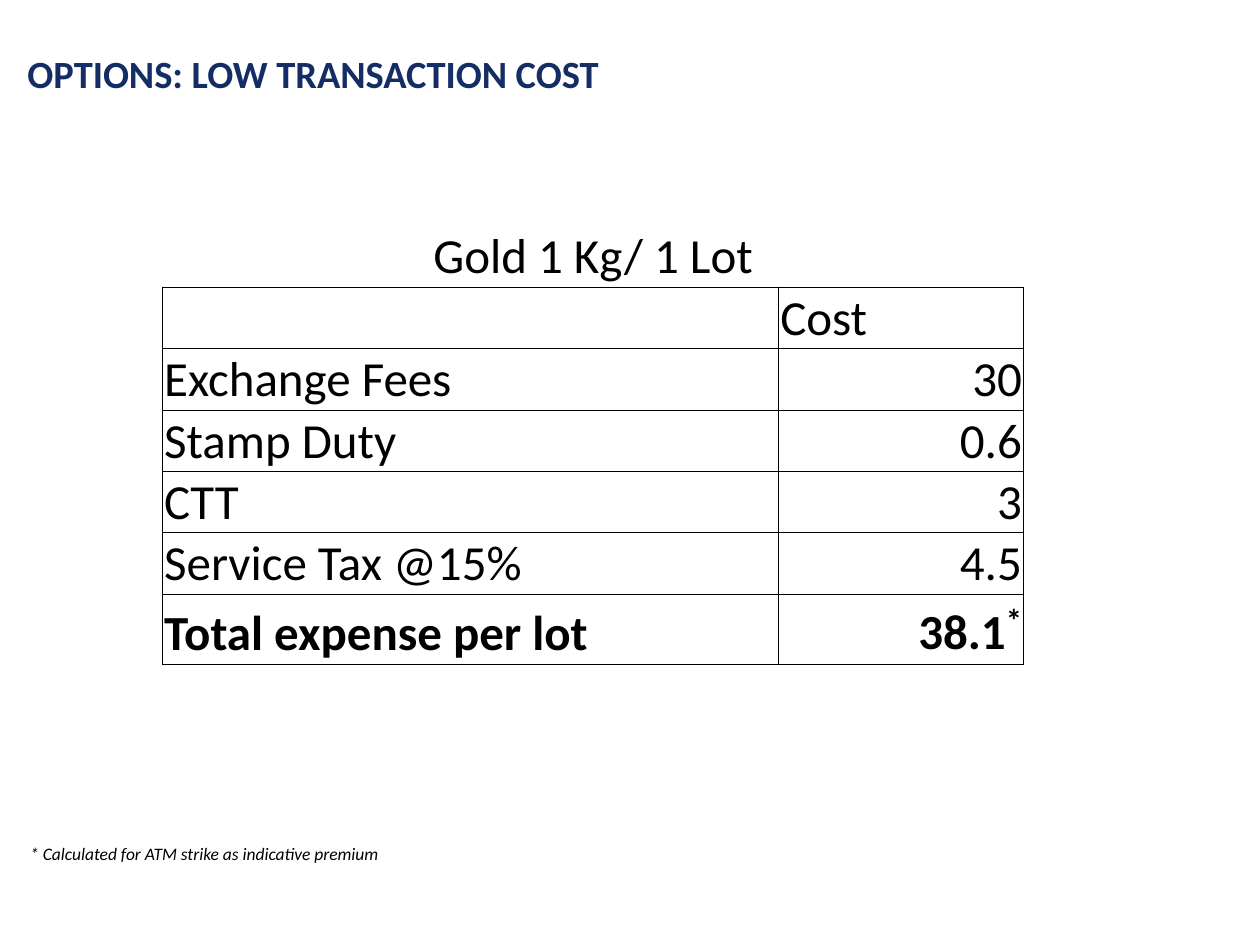
from dataclasses import dataclass

from lxml import etree
from pptx import Presentation
from pptx.dml.color import RGBColor
from pptx.enum.text import MSO_ANCHOR, MSO_AUTO_SIZE, PP_ALIGN
from pptx.oxml.ns import qn
from pptx.util import Cm, Pt

LEFT, CENTER, RIGHT = PP_ALIGN.LEFT, PP_ALIGN.CENTER, PP_ALIGN.RIGHT
TOP, BOTTOM = MSO_ANCHOR.TOP, MSO_ANCHOR.BOTTOM
FIT_SHAPE, NO_FIT = MSO_AUTO_SIZE.SHAPE_TO_FIT_TEXT, MSO_AUTO_SIZE.NONE
TITLE_ONLY = 5


@dataclass(frozen=True)
class Theme:
    font: str = "Calibri"
    navy: str = "152D65"
    black: str = "000000"
    title_size: int = 22
    table_size: int = 28
    mark_size: int = 32
    note_size: int = 10
    rule_width: float = 0.5


THEME = Theme()
COSTS = [
    ("", "Cost"),
    ("Exchange Fees", "30"),
    ("Stamp Duty", "0.6"),
    ("CTT", "3"),
    ("Service Tax @15%", "4.5"),
    ("Total expense per lot", "38.1"),
]


def apply(target, formats):
    for attribute, value in formats.items():
        setattr(target, attribute, value)


def add_text(paragraph, wording, size, color=THEME.black, **formats):
    run = paragraph.add_run()
    run.text = wording
    apply(run.font, {"name": THEME.font, "size": Pt(size), **formats})
    run.font.color.rgb = RGBColor.from_string(color)
    return run


def place_title(slide, left, top, width, height):
    title = slide.shapes.title
    apply(title, {"left": left, "top": top, "width": width, "height": height})
    apply(title.text_frame, {"vertical_anchor": TOP, "word_wrap": True, "auto_size": NO_FIT})
    heading = title.text_frame.paragraphs[0]
    apply(heading, {"alignment": LEFT, "line_spacing": 0.8})
    indent = Cm(0.96)
    properties = heading._p.get_or_add_pPr()
    properties.set("marL", str(indent))
    properties.set("indent", str(-indent))
    add_text(heading, "OPTIONS: LOW TRANSACTION COST", THEME.title_size, THEME.navy, bold=True)


def rule_cell(cell, ruled_sides):
    cell.fill.background()
    properties = cell._tc.get_or_add_tcPr()
    for position, side in enumerate("LRTB"):
        line = etree.Element(qn(f"a:ln{side}"), w=str(Pt(THEME.rule_width)))
        if side in ruled_sides:
            fill = etree.SubElement(line, qn("a:solidFill"))
            etree.SubElement(fill, qn("a:srgbClr"), val=THEME.black)
        else:
            etree.SubElement(line, qn("a:noFill"))
        properties.insert(position, line)


def fill_cell(cell, wording, alignment, bold=False):
    apply(cell, {
        "vertical_anchor": BOTTOM,
        "margin_left": Cm(0.03),
        "margin_right": Cm(0.03),
        "margin_top": Cm(0.03),
        "margin_bottom": 0,
    })
    entry = cell.text_frame.paragraphs[0]
    entry.alignment = alignment
    add_text(entry, wording, THEME.table_size, bold=bold)
    return entry


def place_cost_table(slide, left, top, width, height):
    frame = slide.shapes.add_table(len(COSTS) + 1, 2, left, top, width, height)
    table = frame.table
    apply(table, {"first_row": False, "horz_banding": False})
    cost_width = Cm(4.93)
    table.columns[0].width = width - cost_width
    table.columns[1].width = cost_width
    for row in table.rows:
        row.height = Cm(0.97)
    frame.height = height

    caption = table.cell(0, 0)
    caption.merge(table.cell(0, 1))
    fill_cell(caption, "Gold 1 Kg/ 1 Lot", CENTER)
    for column in range(2):
        rule_cell(table.cell(0, column), "B")

    for index, (item, cost) in enumerate(COSTS, start=1):
        is_total = index == len(COSTS)
        item_cell, cost_cell = table.cell(index, 0), table.cell(index, 1)
        if item:
            fill_cell(item_cell, item, LEFT, is_total)
        amount = fill_cell(cost_cell, cost, RIGHT if item else LEFT, is_total)
        if is_total:
            mark = add_text(amount, "*", THEME.mark_size, bold=True)
            mark._r.get_or_add_rPr().set("baseline", "30000")
        for cell in (item_cell, cost_cell):
            rule_cell(cell, "LRTB")


def place_footnote(slide, left, top, width, height):
    footnote = slide.shapes.add_textbox(left, top, width, height)
    apply(footnote.text_frame, {"word_wrap": True, "auto_size": FIT_SHAPE})
    add_text(
        footnote.text_frame.paragraphs[0],
        "* Calculated for ATM strike as indicative premium",
        THEME.note_size,
        italic=True,
    )


def main():
    deck = Presentation()
    apply(deck, {"slide_width": Cm(25.4), "slide_height": Cm(19.05)})
    slide = deck.slides.add_slide(deck.slide_layouts[TITLE_ONLY])
    place_title(slide, Cm(0.3), Cm(1.07), Cm(18.39), Cm(1.42))
    place_cost_table(slide, Cm(3.28), Cm(4.55), Cm(17.35), Cm(8.48))
    place_footnote(slide, Cm(0.36), Cm(16.87), Cm(12.95), Cm(0.69))
    deck.save("out.pptx")


if __name__ == "__main__":
    main()
